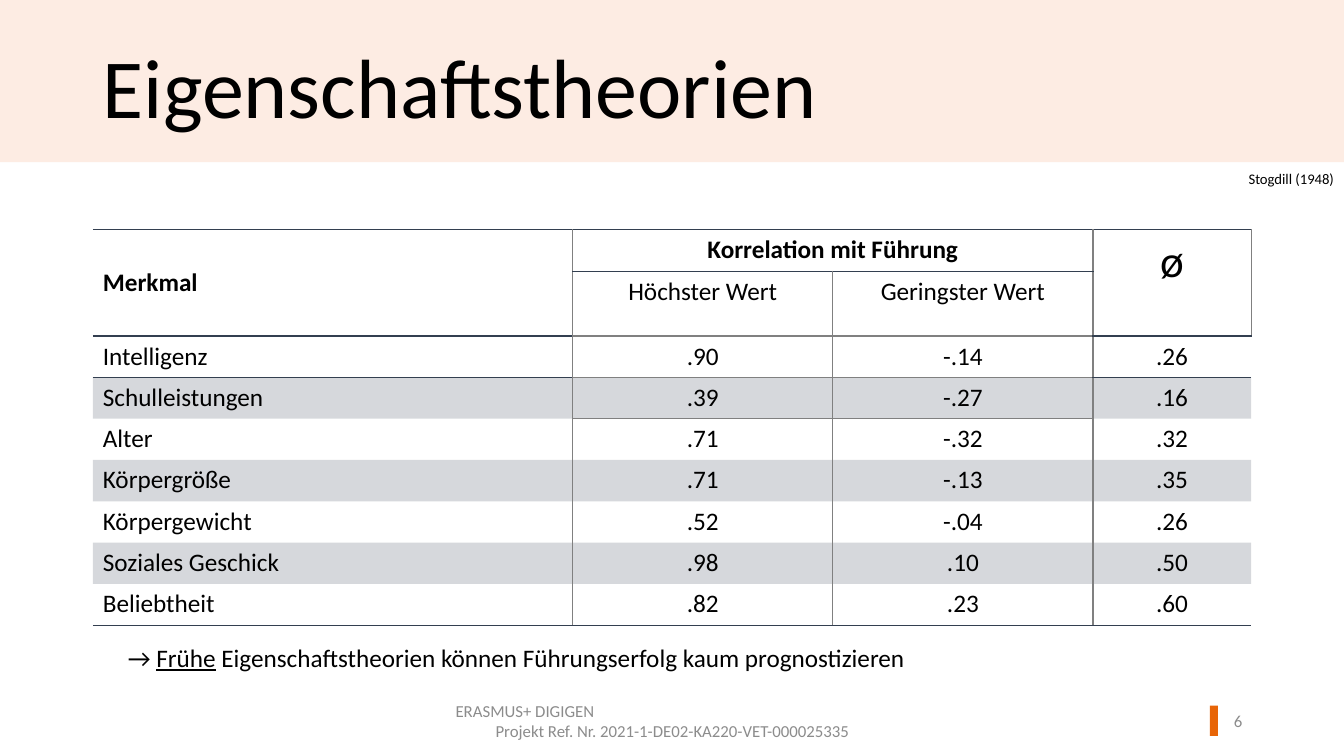
"""Build the slide on trait theories of leadership with its correlation table."""
from dataclasses import dataclass

from lxml import etree
from pptx import Presentation
from pptx.dml.color import RGBColor
from pptx.enum.shapes import MSO_SHAPE
from pptx.enum.text import MSO_ANCHOR, MSO_AUTO_SIZE, PP_ALIGN
from pptx.oxml.ns import qn
from pptx.util import Inches, Pt

RECTANGLE = MSO_SHAPE.RECTANGLE
TOP, MIDDLE = MSO_ANCHOR.TOP, MSO_ANCHOR.MIDDLE
NO_FIT = MSO_AUTO_SIZE.NONE
LEFT, CENTER, RIGHT = PP_ALIGN.LEFT, PP_ALIGN.CENTER, PP_ALIGN.RIGHT
PLAIN_TABLE = "{2D5ABB26-0587-4C30-8999-92F81FD0307C}"


@dataclass(frozen=True)
class Theme:
    font: str = "Calibri"
    text: str = "000000"
    muted: str = "8C8C8C"
    banner: str = "FDECE3"
    accent: str = "E86507"
    slate: str = "333F50"
    rule: str = "808080"
    title_size: float = 60
    mean_size: float = 32
    body_size: float = 18
    footer_size: float = 12
    source_size: float = 10.5


THEME = Theme()


def write(para, text, size=THEME.body_size, color=THEME.text, align=LEFT, bold=False, underline=False):
    para.alignment = align
    span = para.add_run()
    span.text = text
    span.font.name = THEME.font
    span.font.size = Pt(size)
    span.font.color.rgb = RGBColor.from_string(color)
    span.font.bold = bold
    span.font.underline = underline


def set_border(cell, side, color):
    line = etree.SubElement(cell._tc.get_or_add_tcPr(), qn(f"a:ln{side}"), w=str(Pt(1)))
    fill = etree.SubElement(line, qn("a:solidFill"))
    etree.SubElement(fill, qn("a:srgbClr"), val=color)


deck = Presentation()
deck.slide_width, deck.slide_height = Inches(13.33), Inches(7.5)
page = deck.slides.add_slide(deck.slide_layouts[5])

for left, top, width, height, color in (
    (0, 0, 13.33, 1.61, THEME.banner),
    (12, 7, 0.08, 0.3, THEME.accent),
):
    block = page.shapes.add_shape(RECTANGLE, Inches(left), Inches(top), Inches(width), Inches(height))
    block.shadow.inherit = False
    block.fill.solid()
    block.fill.fore_color.rgb = RGBColor.from_string(color)
    block.line.fill.background()

title = page.shapes.title
title._element.getparent().append(title._element)
title.left, title.top, title.width, title.height = Inches(0.92), Inches(0.41), Inches(9.93), Inches(0.85)
title.text_frame.auto_size = NO_FIT
title.text_frame.vertical_anchor = TOP
title.text_frame.paragraphs[0].line_spacing = 0.9
write(title.text_frame.paragraphs[0], "Eigenschaftstheorien", size=THEME.title_size)

rows = (
    ("Merkmal", "Korrelation mit Führung", "", "ø"),
    ("", "Höchster Wert", "Geringster Wert", ""),
    ("Intelligenz", ".90", "-.14", ".26"),
    ("Schulleistungen", ".39", "-.27", ".16"),
    ("Alter", ".71", "-.32", ".32"),
    ("Körpergröße", ".71", "-.13", ".35"),
    ("Körpergewicht", ".52", "-.04", ".26"),
    ("Soziales Geschick", ".98", ".10", ".50"),
    ("Beliebtheit", ".82", ".23", ".60"),
)
columns = (4.76, 2.58, 2.58, 1.57)
last_row, last_col = len(rows) - 1, len(columns) - 1
table = page.shapes.add_table(
    len(rows), len(columns), Inches(0.92), Inches(2.28), Inches(11.5), Inches(3.65)
).table
table.first_row = table.horz_banding = False
table._tbl.tblPr.find(qn("a:tableStyleId")).text = PLAIN_TABLE
for column, width in zip(table.columns, columns):
    column.width = Inches(width)

below = {(row, col): THEME.slate for row, col in ((0, 1), (0, 2), (1, 0), (1, 3))}
below |= {(row, col): THEME.rule for row in (1, 2) for col in (1, 2)}
below |= {(edge, col): THEME.slate for edge in (-1, last_row) for col in range(len(columns))}

for row, labels in enumerate(rows):
    table.rows[row].height = Inches(0.41)
    for col, label in enumerate(labels):
        cell = table.cell(row, col)
        edges = (
            ("L", THEME.rule if col > 0 and (row, col) != (0, 2) else None),
            ("R", THEME.rule if col < last_col and (row, col) != (0, 1) else None),
            ("T", below.get((row - 1, col))),
            ("B", below.get((row, col))),
        )
        for side, color in edges:
            if color:
                set_border(cell, side, color)
        if row > 2 and row % 2:
            cell.fill.solid()
            cell.fill.fore_color.rgb = RGBColor.from_string(THEME.slate)
            shade = cell._tc.tcPr.find(f"{qn('a:solidFill')}/{qn('a:srgbClr')}")
            etree.SubElement(shade, qn("a:alpha"), val="20000")
        else:
            cell.fill.background()
        write(
            cell.text_frame.paragraphs[0],
            label,
            size=THEME.mean_size if label == "ø" else THEME.body_size,
            align=CENTER if col else LEFT,
            bold=row == 0 and col < last_col,
        )

table.cell(0, 0).vertical_anchor = MIDDLE
table.cell(0, 0).merge(table.cell(1, 0))
table.cell(0, 1).merge(table.cell(0, 2))
table.cell(0, 3).merge(table.cell(1, 3))

conclusion = page.shapes.add_textbox(Inches(1.17), Inches(6.32), Inches(8.34), Inches(0.4))
para = conclusion.text_frame.paragraphs[0]
write(para, "→ ")
write(para, "Frühe", underline=True)
write(para, " Eigenschaftstheorien können Führungserfolg kaum prognostizieren")

source = page.shapes.add_textbox(Inches(12.21), Inches(1.64), Inches(1.12), Inches(0.28))
write(source.text_frame.paragraphs[0], "Stogdill (1948)", size=THEME.source_size, align=RIGHT)

for left, width, lines in (
    (4.42, 4.5, (("ERASMUS+ DIGIGEN", LEFT), ("Projekt Ref. Nr. 2021-1-DE02-KA220-VET-000025335", CENTER))),
    (11.77, 0.65, (("6", RIGHT),)),
):
    frame = page.shapes.add_textbox(Inches(left), Inches(6.95), Inches(width), Inches(0.4)).text_frame
    frame.word_wrap = True
    frame.vertical_anchor = MIDDLE
    for index, (text, align) in enumerate(lines):
        para = frame.add_paragraph() if index else frame.paragraphs[0]
        write(para, text, size=THEME.footer_size, color=THEME.muted, align=align)

deck.save("out.pptx")
